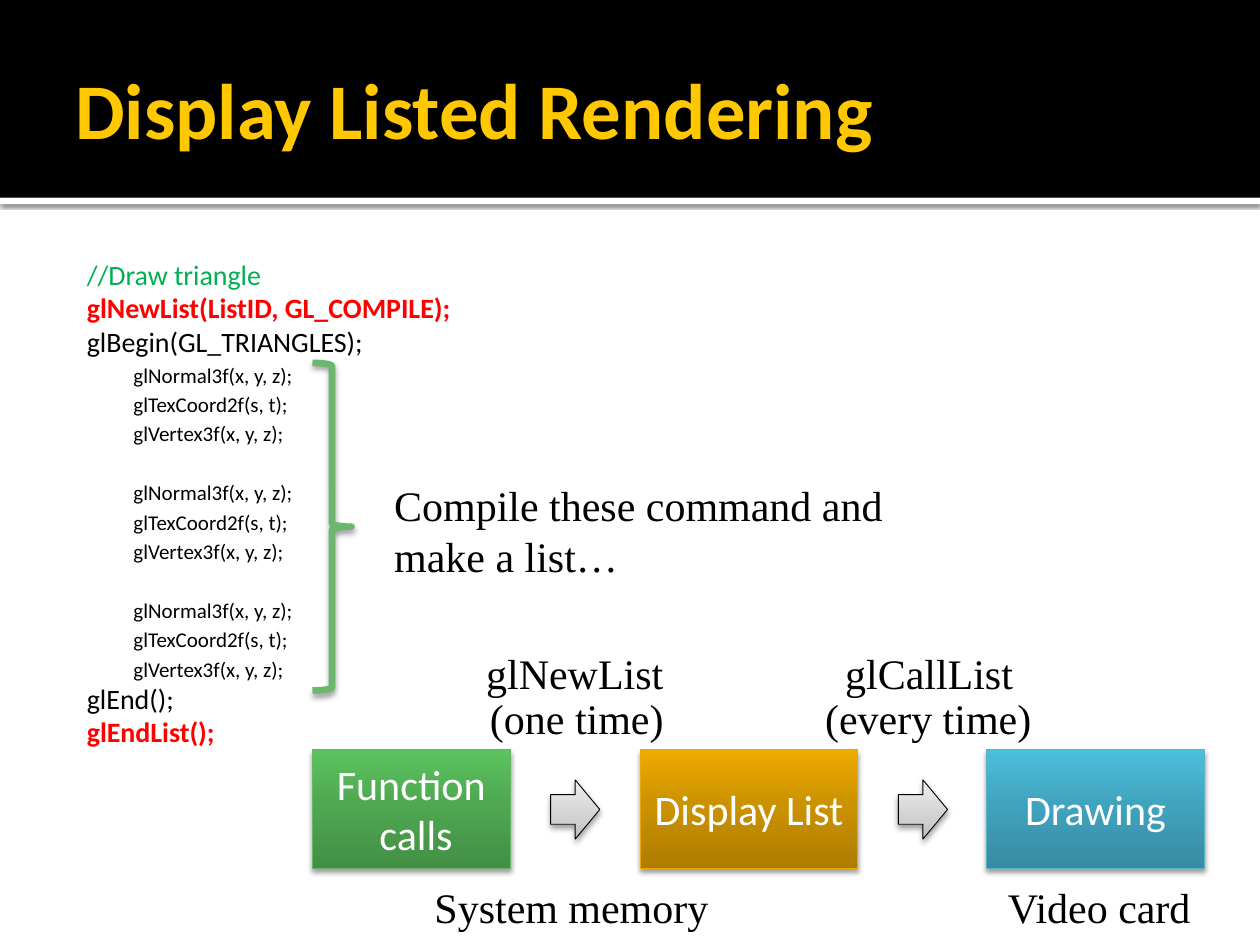
from copy import deepcopy
from lxml.etree import SubElement
from pptx import Presentation
from pptx.dml.color import RGBColor
from pptx.enum.shapes import MSO_SHAPE as Shape
from pptx.enum.text import MSO_ANCHOR as Anchor, PP_ALIGN as Align
from pptx.oxml.ns import qn
from pptx.util import Inches, Pt

BLACK = RGBColor(0x00, 0x00, 0x00)
WHITE = RGBColor(0xFF, 0xFF, 0xFF)
GOLD = RGBColor(0xFF, 0xC8, 0x00)
RED = RGBColor(0xFF, 0x00, 0x00)
COMMENT_GREEN = RGBColor(0x00, 0xB0, 0x50)
BRACE_GREEN = RGBColor(0x6B, 0xB7, 0x6D)
GREEN_EDGE = RGBColor(0x67, 0xB5, 0x69)
AMBER_EDGE = RGBColor(0xEB, 0xA9, 0x00)
BLUE_EDGE = RGBColor(0x5B, 0xB3, 0xCA)
GREENS = [RGBColor(0x43, 0x8F, 0x45), RGBColor(0x4F, 0xA8, 0x51), RGBColor(0x5C, 0xC3, 0x5F)]
AMBERS = [RGBColor(0xAE, 0x7D, 0x00), RGBColor(0xCC, 0x93, 0x00), RGBColor(0xEE, 0xAB, 0x00)]
BLUES = [RGBColor(0x37, 0x8B, 0xA2), RGBColor(0x41, 0xA4, 0xBF), RGBColor(0x4B, 0xBF, 0xDE)]
GREYS = [RGBColor(0xBD, 0xBD, 0xBD), RGBColor(0xD1, 0xD1, 0xD1), RGBColor(0xEE, 0xEE, 0xEE)]

deck = Presentation()
deck.slide_width, deck.slide_height = Inches(10), Inches(7.5)
page = deck.slides.add_slide(deck.slide_layouts[6])
column, row = deck.slide_width / 100, deck.slide_height / 100


def add_figure(kind, place, colours=(), middle=0.55, edge=None, weight=0.5, shadow=None):
    left, top, width, height = place
    shape = page.shapes.add_shape(
        kind, int(left * column), int(top * row), int(width * column), int(height * row))
    if len(colours) == 3:
        shape.fill.gradient()
        shape.fill.gradient_angle = 90
        first = shape.element.spPr.find(".//" + qn("a:gs"))
        first.addnext(deepcopy(first))
        for stop, share, colour in zip(shape.fill.gradient_stops, (0, middle, 1), colours):
            stop.position = share
            stop.color.rgb = colour
    elif colours:
        shape.fill.solid()
        shape.fill.fore_color.rgb = colours[0]
    else:
        shape.fill.background()
    if edge is None:
        shape.line.fill.background()
    else:
        shape.line.color.rgb = edge
        shape.line.width = Pt(weight)
    shape.shadow.inherit = False
    if shadow:
        blur, distance, opacity = shadow
        effects = shape.element.spPr.find(qn("a:effectLst"))
        outer = SubElement(effects, qn("a:outerShdw"), blurRad=str(Pt(blur)),
                           dist=str(Pt(distance)), dir="5400000", rotWithShape="0")
        tint = SubElement(outer, qn("a:srgbClr"), val="000000")
        SubElement(tint, qn("a:alpha"), val=str(opacity * 1000))
    return shape


def add_words(place, words, size, font, colour, bold=False):
    left, top, width, height = place
    box = page.shapes.add_textbox(
        int(left * column), int(top * row), int(width * column), int(height * row))
    box.text_frame.text = words
    for para in box.text_frame.paragraphs:
        para.font.size = Pt(size)
        for span in para.runs:
            span.font.size = Pt(size)
            span.font.name = font
            span.font.color.rgb = colour
            span.font.bold = bold
    return box


add_figure(Shape.RECTANGLE, (0, 20.93, 100, 0.67), [WHITE], shadow=(2.5, 0.8, 60))
add_figure(Shape.RECTANGLE, (0, 0, 100, 20.93), [BLACK])
title = add_words((5, 2.27, 90, 18.27), "Display Listed Rendering", 45, "Calibri", GOLD, True)
title.text_frame.word_wrap = True
title.text_frame.vertical_anchor = Anchor.MIDDLE
title.text_frame.margin_right = Inches(0.05)

opening = ["//Draw triangle", "glNewList(ListID, GL_COMPILE);", "glBegin(GL_TRIANGLES);"]
vertex = ["glNormal3f(x, y, z);", "glTexCoord2f(s, t);", "glVertex3f(x, y, z);"]
closing = ["glEnd();", "glEndList();"]
code = add_words((5, 25.87, 90, 67.47), "\n".join(opening + vertex * 3 + closing),
                 16, "Calibri", BLACK)
code.text_frame.word_wrap = True
code.text_frame.margin_left = Inches(0.06)
code.text_frame.margin_top = Inches(0.1)
lines = code.text_frame.paragraphs
for para in lines:
    para_format = para._p.get_or_add_pPr()
    para_format.set("marL", str(Inches(0.13)))
    para_format.set("indent", "0")
    span = para.runs[0]
    if span.text.startswith("//"):
        span.font.color.rgb = COMMENT_GREEN
    elif "List(" in span.text:
        span.font.color.rgb = RED
        span.font.bold = True
for index, para in enumerate(lines[len(opening):-len(closing)]):
    para._p.get_or_add_pPr().set("marL", str(Inches(0.5)))
    para.font.size = para.runs[0].font.size = Pt(12)
    starts_later_vertex = index > 0 and index % len(vertex) == 0
    para.space_before = Pt(19.2 if starts_later_vertex else 2.4)

add_figure(Shape.RIGHT_BRACE, (24.8, 38.4, 3.1, 34.67), edge=BRACE_GREEN, weight=3.78,
           shadow=(3.5, 2, 38))

stages = [
    ("Function\v calls", 24.8, 15.7, GREENS, GREEN_EDGE),
    ("Display List", 50.8, 17.3, AMBERS, AMBER_EDGE),
    ("Drawing", 78.3, 17.3, BLUES, BLUE_EDGE),
]
for words, left, width, colours, edge in stages:
    stage = add_figure(Shape.RECTANGLE, (left, 79.33, width, 12.53), colours, edge=edge,
                       shadow=(3.1, 2, 38))
    stage.text_frame.text = words
    stage.text_frame.word_wrap = True
    stage.text_frame.vertical_anchor = Anchor.MIDDLE
    para = stage.text_frame.paragraphs[0]
    para.alignment = Align.CENTER
    para.font.size = Pt(24)
    for span in para.runs:
        span.font.size = Pt(24)
        span.font.name = "Calibri"
        span.font.color.rgb = WHITE

for left in (43.7, 71.3):
    add_figure(Shape.RIGHT_ARROW, (left, 82.53, 3.9, 6.27), GREYS, middle=0.35, edge=BLACK,
               shadow=(3.5, 2, 38))

labels = [
    ("Compile these command and\vmake a list…", 30.3, 50, 42, 12.13),
    ("System memory", 33.5, 92.67, 24, 6.67),
    ("Video card", 79, 92.67, 16.7, 6.67),
    ("(one time)", 37.9, 72.67, 15.9, 6.67),
    ("(every time)", 64.5, 72.67, 18.5, 6.67),
    ("glCallList", 66.1, 67.87, 15.4, 6.67),
    ("glNewList", 37.6, 67.87, 16.2, 6.67),
]
for words, *place in labels:
    label = add_words(place, words, 24, "Times New Roman", BLACK)
    label.text_frame.word_wrap = False
    if "\v" in words:
        label.text_frame.paragraphs[0].line_spacing = Pt(29.3)

deck.save("out.pptx")
